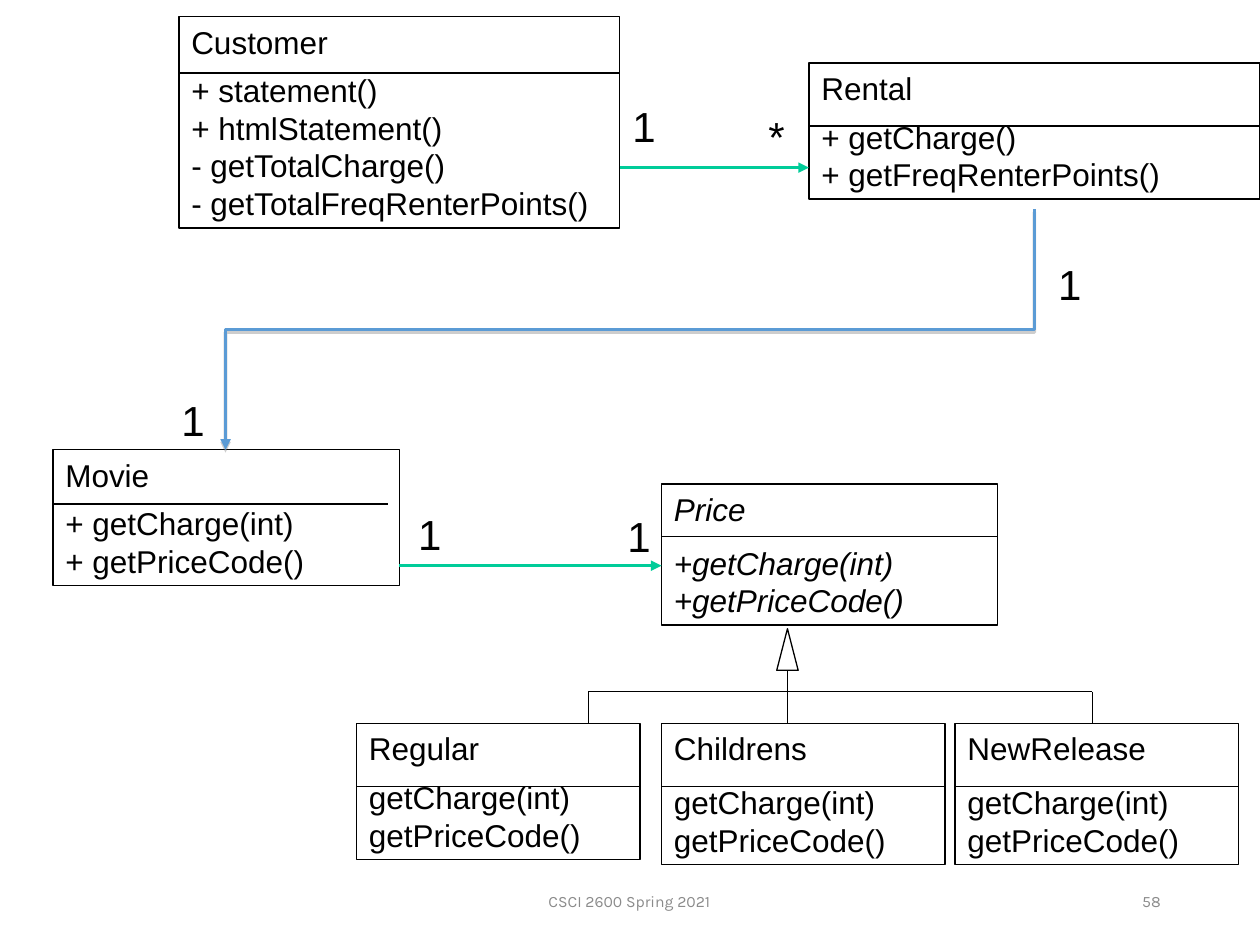
"""Build a slide with the class diagram of a movie rental program."""
from dataclasses import dataclass

from lxml.etree import SubElement as add_node
from pptx import Presentation
from pptx.dml.color import RGBColor as Color
from pptx.enum.shapes import MSO_CONNECTOR as Wire, MSO_SHAPE as Kind
from pptx.enum.text import MSO_ANCHOR as Anchor, PP_ALIGN as Align
from pptx.oxml.ns import qn
from pptx.shapes.autoshape import Shape
from pptx.shapes.connector import Connector as Line
from pptx.slide import Slide
from pptx.text.text import _Paragraph as Para
from pptx.util import Inches, Pt

HUES = {"ink": "000000", "green": "00CC99", "blue": "5B9BD5",
        "gray": "8B8B8B", "shade": "808080"}


@dataclass
class Box:
    name: str
    calls: list[str]
    left: float
    top: float
    width: float
    height: float
    split: float
    gap: int = 6
    slant: bool = False
    trim: float = 0


@dataclass
class Label:
    text: str
    left: float
    top: float
    width: float = 0.38
    height: float = 0.5
    size: int = 24
    font: str = "Arial"
    hue: str = "ink"
    align: Align = Align.LEFT
    anchor: Anchor = Anchor.TOP
    wrap: bool = False


def tint(hue: str) -> Color:
    return Color.from_string(HUES[hue])


def add_run(para: Para, text: str, size: int = 18, font: str = "Arial",
            hue: str = "ink", slant: bool = False) -> None:
    run = para.add_run()
    run.text = text
    run.font.size = Pt(size)
    run.font.name = font
    run.font.color.rgb = tint(hue)
    if slant:
        run.font.italic = True


def add_frame(slide: Slide, kind: Kind, left: float, top: float,
              width: float, height: float) -> Shape:
    shape = slide.shapes.add_shape(
        kind, Inches(left), Inches(top), Inches(width), Inches(height))
    shape.shadow.inherit = False
    shape.fill.background()
    shape.line.color.rgb = tint("ink")
    shape.line.width = Pt(0.75)
    return shape


def add_line(slide: Slide, x1: float, y1: float, x2: float, y2: float,
             hue: str = "ink", width: float = 0.75, arrow: bool = False,
             kind: Wire = Wire.STRAIGHT) -> Line:
    line = slide.shapes.add_connector(
        kind, Inches(x1), Inches(y1), Inches(x2), Inches(y2))
    line.line.color.rgb = tint(hue)
    line.line.width = Pt(width)
    if arrow:
        add_node(line.line._get_or_add_ln(), qn("a:tailEnd"), type="triangle")
    add_node(line._element.spPr, qn("a:effectLst"))
    return line


def add_bend(slide: Slide, x1: float, y1: float, x2: float, y2: float) -> None:
    mid_x, mid_y = (x1 + x2) / 2, (y1 + y2) / 2
    half_w, half_h = abs(y2 - y1) / 2, abs(x2 - x1) / 2
    bend = add_line(slide, mid_x - half_w, mid_y - half_h, mid_x + half_w,
                    mid_y + half_h, "blue", 2, True, Wire.ELBOW)
    props = bend._element.spPr
    props.find(qn("a:xfrm")).set("rot", "5400000")
    shade = add_node(props.find(qn("a:effectLst")), qn("a:outerShdw"),
                     dist=str(Pt(1.6)), dir="5400000", rotWithShape="0")
    tone = add_node(shade, qn("a:srgbClr"), val=HUES["shade"])
    add_node(tone, qn("a:alpha"), val="38000")


def draw_box(slide: Slide, box: Box) -> None:
    frame = add_frame(slide, Kind.RECTANGLE, box.left, box.top,
                      box.width, box.height).text_frame
    frame.word_wrap = True
    frame.vertical_anchor = Anchor.TOP
    for para, lines in ((frame.paragraphs[0], [box.name]),
                        (frame.add_paragraph(), box.calls)):
        para.alignment = Align.LEFT
        para.space_before = Pt(box.gap)
        for i, text in enumerate(lines):
            if i:
                para.add_line_break()
            add_run(para, text, slant=box.slant)
    add_line(slide, box.left, box.split,
             box.left + box.width - box.trim, box.split)


def draw_label(slide: Slide, label: Label) -> None:
    frame = slide.shapes.add_textbox(
        Inches(label.left), Inches(label.top),
        Inches(label.width), Inches(label.height)).text_frame
    frame.word_wrap = label.wrap
    frame.vertical_anchor = label.anchor
    para = frame.paragraphs[0]
    para.alignment = label.align
    add_run(para, label.text, label.size, label.font, label.hue)


def draw_tree(slide: Slide, mid: float, ends: tuple[float, float],
              bar: float, base: float) -> None:
    head = add_frame(slide, Kind.FLOWCHART_EXTRACT, mid - 0.17 / 2, 4.99,
                     0.17, 0.33)
    add_line(slide, ends[0], bar, ends[1], bar)
    for x in ends:
        add_line(slide, x, bar, x, base)
    stem = add_line(slide, mid, 5.32, mid, base)
    stem.begin_connect(head, 2)


def main() -> None:
    deck = Presentation()
    deck.slide_width, deck.slide_height = Inches(10), Inches(7.5)
    slide = deck.slides.add_slide(deck.slide_layouts[6])

    plain = ["getCharge(int)", "getPriceCode()"]
    base = 5.74
    boxes = [
        Box("Movie", [f"+ {call}" for call in plain],
            0.42, 3.57, 2.75, 1.08, 4, trim=0.09),
        Box("Price", [f"+{call}" for call in plain],
            5.25, 3.84, 2.67, 1.12, 4.26, 9, True),
        Box("Regular", plain, 2.83, base, 2.25, 1.08, 6.24),
        Box("Childrens", plain, 5.25, base, 2.25, 1.12, 6.24, 9),
        Box("NewRelease", plain, 7.58, base, 2.25, 1.12, 6.24, 9),
        Box("Customer", ["+ statement()", "+ htmlStatement()",
                         "- getTotalCharge()", "- getTotalFreqRenterPoints()"],
            1.42, 0.13, 3.5, 1.68, 0.58),
        Box("Rental", ["+ getCharge()", "+ getFreqRenterPoints()"],
            6.42, 0.5, 3.58, 1.08, 1),
    ]
    for box in boxes:
        draw_box(slide, box)

    draw_tree(slide, 6.25, (4.67, 8.67), 5.49, base)
    for x1, x2, y in ((3.17, 5.25, 4.49), (4.92, 6.42, 1.33)):
        add_line(slide, x1, y, x2, y, "green", 2, True)
    add_bend(slide, 8.21, 1.66, 1.79, 3.57)

    foot = {"top": 6.95, "height": 0.4, "size": 9, "font": "Karla",
            "hue": "gray", "anchor": Anchor.MIDDLE, "wrap": True}
    labels = [
        Label("1", 4.92, 0.75),
        Label("*", 6, 0.83, 0.33),
        Label("1", 8.3, 2),
        Label("1", 1.34, 3.08),
        Label("1", 3.22, 3.99),
        Label("1", 4.88, 4),
        Label("CSCI 2600 Spring 2021", 3.31, width=3.37,
              align=Align.CENTER, **foot),
        Label("58", 7.06, width=2.25, align=Align.RIGHT, **foot),
    ]
    for label in labels:
        draw_label(slide, label)
    deck.save("out.pptx")


if __name__ == "__main__":
    main()
